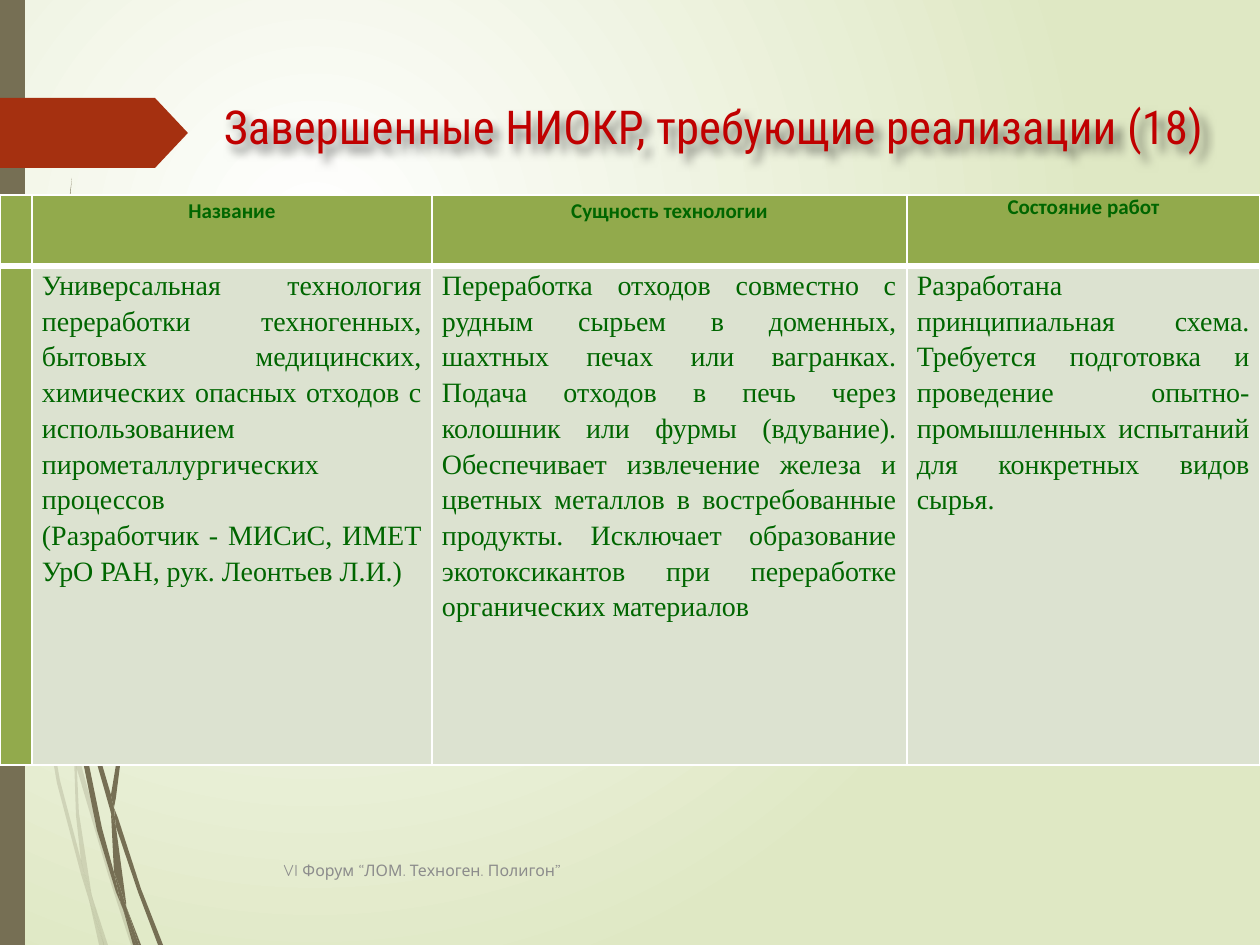
from dataclasses import dataclass

from lxml.etree import SubElement
from pptx import Presentation
from pptx.dml.color import RGBColor
from pptx.enum.shapes import MSO_SHAPE
from pptx.enum.text import MSO_ANCHOR, MSO_AUTO_SIZE, PP_ALIGN
from pptx.oxml.ns import qn
from pptx.shapes.base import BaseShape
from pptx.slide import Slide
from pptx.table import _Cell
from pptx.text.text import TextFrame
from pptx.util import Emu, Pt

EMU_PER_PX = 914400 / 168
SLIDE_WIDTH, SLIDE_HEIGHT = 1260, 945

WHITE = RGBColor(0xFF, 0xFF, 0xFF)
PALE_GREEN = RGBColor(0xDF, 0xE8, 0xC4)
BROWN = RGBColor(0x76, 0x6F, 0x54)
RUST = RGBColor(0xA5, 0x30, 0x10)
TITLE_RED = RGBColor(0xC0, 0x00, 0x00)
TEXT_GREEN = RGBColor(0x00, 0x66, 0x00)
HEADER_GREEN = RGBColor(0x92, 0xAA, 0x4C)
CELL_GREEN = RGBColor(0xDC, 0xE2, 0xD0)
FOOTER_GRAY = RGBColor(0x8C, 0x8C, 0x8C)

Points = list[tuple[int, int]]


@dataclass(frozen=True)
class Box:
    left: int
    top: int
    width: int
    height: int

    def emu(self) -> tuple[Emu, Emu, Emu, Emu]:
        return px(self.left), px(self.top), px(self.width), px(self.height)


@dataclass(frozen=True)
class TextStyle:
    font: str
    size: float
    color: RGBColor
    align: PP_ALIGN = PP_ALIGN.LEFT
    bold: bool = False
    line_spacing: float = 1.0


@dataclass(frozen=True)
class Column:
    width: int
    heading: str
    body: str
    heading_spacing: float = 1.15


TITLE = TextStyle("Roboto Condensed", 20, TITLE_RED)
FOOTER = TextStyle("Quicksand", 6.8, FOOTER_GRAY)
BODY = TextStyle("Times New Roman", 12, TEXT_GREEN, PP_ALIGN.JUSTIFY, line_spacing=1.15)

TABLE_BOX = Box(0, 195, 1260, 570)
ROW_HEIGHTS = (71, 499)
COLUMNS = [
    Column(32, "", ""),
    Column(400, "Название",
           "Универсальная технология переработки техногенных, бытовых медицинских, "
           "химических опасных отходов с использованием пирометаллургических процессов\n"
           "(Разработчик - МИСиС, ИМЕТ УрО РАН, рук. Леонтьев Л.И.)"),
    Column(475, "Сущность технологии",
           "Переработка отходов совместно с рудным сырьем в доменных, шахтных печах или "
           "вагранках. Подача отходов в печь через колошник или фурмы (вдувание). "
           "Обеспечивает извлечение железа и цветных металлов в востребованные продукты. "
           "Исключает образование экотоксикантов при переработке органических материалов"),
    Column(353, "Состояние работ",
           "Разработана принципиальная схема. Требуется подготовка и проведение "
           "опытно-промышленных испытаний для конкретных видов сырья.", 1.0),
]

FAINT_STEMS: list[Points] = [
    [(81, 764), (77, 751), (77, 769), (108, 874), (131, 945), (136, 945), (111, 872)],
    [(104, 945), (108, 945), (92, 896)],
    [(81, 860), (60, 780), (27, 591), (15, 474), (10, 441), (24, 591), (57, 783), (81, 874),
     (89, 900), (87, 890)],
    [(74, 754), (76, 815), (81, 860), (84, 872), (92, 896), (91, 890), (79, 813), (77, 769),
     (77, 766)],
    [(89, 900), (99, 945), (104, 945)],
    [(77, 766), (77, 769), (77, 751), (74, 739), (74, 754)],
    [(84, 872), (81, 860), (87, 890), (89, 900), (104, 945), (92, 896)],
]
DARK_STEMS: list[Points] = [
    [(92, 746), (111, 813), (111, 795), (96, 744), (62, 595), (67, 637)],
    [(118, 818), (114, 808), (116, 827), (138, 892), (158, 945), (163, 945), (141, 889)],
    [(114, 872), (102, 828), (76, 701), (67, 637), (59, 601), (71, 702), (97, 830), (116, 892),
     (123, 909), (121, 904)],
    [(62, 595), (60, 571), (55, 440), (60, 307), (66, 244), (72, 178), (64, 244), (59, 307),
     (54, 440), (57, 566)],
    [(139, 945), (141, 945), (126, 906)],
    [(116, 798), (129, 696), (165, 600), (213, 512), (272, 433), (270, 433), (212, 511),
     (163, 598), (128, 694), (111, 795), (114, 808)],
    [(123, 909), (133, 945), (136, 945)],
    [(111, 813), (114, 872), (121, 890), (126, 906), (126, 902), (116, 827), (113, 820)],
    [(111, 813), (113, 820), (116, 827), (114, 808), (111, 795)],
    [(121, 890), (114, 872), (121, 904), (123, 909), (136, 945), (139, 945), (126, 906)],
]


def px(length: int) -> Emu:
    return Emu(round(length * EMU_PER_PX))


def paint_background(slide: Slide) -> None:
    fill = slide.background.fill
    fill.gradient()
    for stop, color in zip(fill.gradient_stops, (WHITE, PALE_GREEN)):
        stop.color.rgb = color
    gradient = slide.element.find(".//" + qn("a:gradFill"))
    gradient.remove(gradient.find(qn("a:lin")))
    circle = SubElement(gradient, qn("a:path"), {"path": "circle"})
    SubElement(circle, qn("a:fillToRect"), l="50000", t="50000", r="100000", b="100000")


def paint_shape(shape: BaseShape, color: RGBColor, opacity: int = 100) -> None:
    shape.shadow.inherit = False
    shape.line.fill.background()
    shape.fill.solid()
    shape.fill.fore_color.rgb = color
    if opacity < 100:
        color_element = shape.fill._xPr.find(".//" + qn("a:srgbClr"))
        SubElement(color_element, qn("a:alpha"), val=str(opacity * 1000))


def draw_stem(slide: Slide, points: Points, opacity: int) -> None:
    builder = slide.shapes.build_freeform(*points[0], scale=EMU_PER_PX)
    builder.add_line_segments(points[1:], close=True)
    paint_shape(builder.convert_to_shape(), BROWN, opacity)


def write_text(text_frame: TextFrame, text: str, style: TextStyle) -> None:
    text_frame.text = text
    for paragraph in text_frame.paragraphs:
        paragraph.alignment = style.align
        paragraph.line_spacing = style.line_spacing
        for run in paragraph.runs:
            run.font.name = style.font
            run.font.size = Pt(style.size)
            run.font.bold = style.bold
            run.font.color.rgb = style.color


def place_title(slide: Slide) -> None:
    title = slide.shapes.title
    title.left, title.top, title.width, title.height = Box(207, 89, 1079, 74).emu()
    write_text(title.text_frame, "Завершенные НИОКР, требующие реализации (18)", TITLE)
    title.text_frame.word_wrap = True
    title.text_frame.auto_size = MSO_AUTO_SIZE.NONE
    title.text_frame.vertical_anchor = MSO_ANCHOR.TOP
    effects = SubElement(title.element.spPr, qn("a:effectLst"))
    shadow = SubElement(effects, qn("a:outerShdw"), blurRad="50800", dist="50800", dir="3000000")
    color = SubElement(shadow, qn("a:srgbClr"), val="000000")
    SubElement(color, qn("a:alpha"), val="50000")


def fill_cell(cell: _Cell, text: str, style: TextStyle, color: RGBColor,
              margin: int, bottom_border: int) -> None:
    cell.margin_left = cell.margin_right = px(margin)
    cell.margin_top = cell.margin_bottom = 0
    write_text(cell.text_frame, text, style)
    properties = cell._tc.get_or_add_tcPr()
    for side, width in (("L", 1), ("R", 1), ("T", 1), ("B", bottom_border)):
        border = SubElement(properties, qn(f"a:ln{side}"), w=str(Pt(width)))
        SubElement(SubElement(border, qn("a:solidFill")), qn("a:srgbClr"), val=str(WHITE))
    cell.fill.solid()
    cell.fill.fore_color.rgb = color


def draw_table(slide: Slide) -> None:
    table = slide.shapes.add_table(len(ROW_HEIGHTS), len(COLUMNS), *TABLE_BOX.emu()).table
    for row, height in zip(table.rows, ROW_HEIGHTS):
        row.height = px(height)
    for index, column in enumerate(COLUMNS):
        table.columns[index].width = px(column.width)
        heading = TextStyle("Calibri", 9, TEXT_GREEN, PP_ALIGN.CENTER, True, column.heading_spacing)
        body_color = CELL_GREEN if column.body else HEADER_GREEN
        fill_cell(table.cell(0, index), column.heading, heading, HEADER_GREEN, 3, 3)
        fill_cell(table.cell(1, index), column.body, BODY, body_color, 10, 1)


def main() -> None:
    presentation = Presentation()
    presentation.slide_width, presentation.slide_height = px(SLIDE_WIDTH), px(SLIDE_HEIGHT)
    slide = presentation.slides.add_slide(presentation.slide_layouts[5])
    paint_background(slide)
    for stems, opacity in ((FAINT_STEMS, 20), (DARK_STEMS, 100)):
        for points in stems:
            draw_stem(slide, points, opacity)
    side_bar = slide.shapes.add_shape(MSO_SHAPE.RECTANGLE, *Box(0, 0, 25, SLIDE_HEIGHT).emu())
    paint_shape(side_bar, BROWN)
    arrow = slide.shapes.add_shape(MSO_SHAPE.PENTAGON, *Box(0, 98, 188, 70).emu())
    arrow.adjustments[0] = 0.47
    paint_shape(arrow, RUST)
    place_title(slide)
    draw_table(slide)
    footer = slide.shapes.add_textbox(*Box(267, 845, 788, 50).emu()).text_frame
    footer.word_wrap = True
    footer.vertical_anchor = MSO_ANCHOR.MIDDLE
    write_text(footer, "VI Форум “ЛОМ. Техноген. Полигон”", FOOTER)
    presentation.save("out.pptx")


if __name__ == "__main__":
    main()
